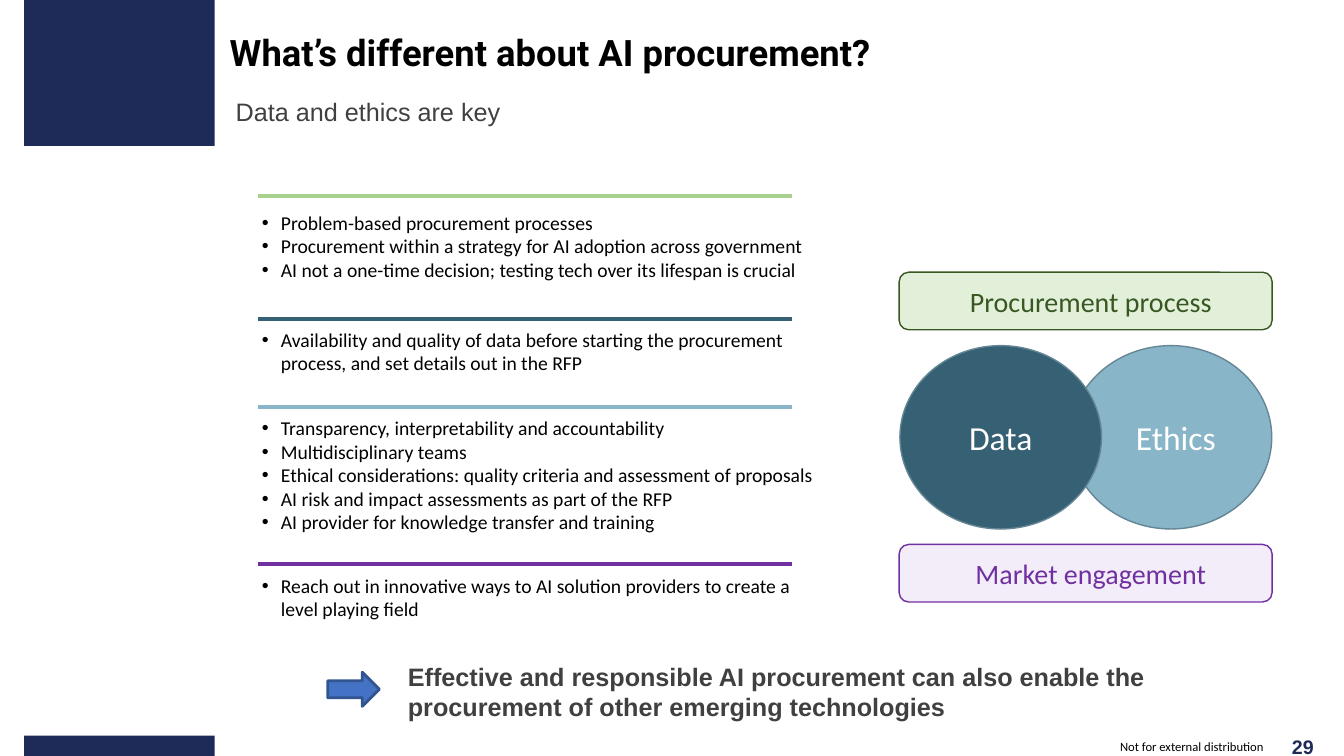
from lxml import etree
from pptx import Presentation
from pptx.dml.color import RGBColor
from pptx.enum.shapes import MSO_CONNECTOR, MSO_SHAPE
from pptx.enum.text import MSO_ANCHOR, PP_ALIGN
from pptx.oxml.ns import qn
from pptx.util import Cm, Pt

RECT, ROUNDED = MSO_SHAPE.RECTANGLE, MSO_SHAPE.ROUNDED_RECTANGLE
OVAL, ARROW = MSO_SHAPE.OVAL, MSO_SHAPE.RIGHT_ARROW
LEFT, CENTER = PP_ALIGN.LEFT, PP_ALIGN.CENTER
TOP, MIDDLE = MSO_ANCHOR.TOP, MSO_ANCHOR.MIDDLE

COLORS = {
    "navy": "1E2B58", "black": "000000", "white": "FFFFFF", "gray": "404040",
    "lime": "A9D18E", "green": "385723", "pale_green": "E2F0D9",
    "teal": "366073", "sky": "89B5C8", "outline": "658694",
    "purple": "7030A0", "pale_purple": "F3EDF9",
    "blue": "4472C4", "dark_blue": "325491",
}

TITLE = "What’s different about AI procurement?"
SUBTITLE = "Data and ethics are key"
CONCLUSION = ("Effective and responsible AI procurement can also enable the "
              "procurement of other emerging technologies")
FOOTER = "Not for external distribution"
PAGE = "29"

# rule colour, rule y, text y, text width, text height, bullets
SECTIONS = [
    ("lime", 4.93, 5.18, 16.18, 2.06, [
        "Problem-based procurement processes",
        "Procurement within a strategy for AI adoption across government",
        "AI not a one-time decision; testing tech over its lifespan is crucial"]),
    ("teal", 8.03, 8.13, 15.2, 1.45, [
        "Availability and quality of data before starting the procurement "
        "process, and set details out in the RFP"]),
    ("sky", 10.26, 10.36, 15.2, 3.25, [
        "Transparency, interpretability and accountability",
        "Multidisciplinary teams",
        "Ethical considerations: quality criteria and assessment of proposals",
        "AI risk and impact assessments as part of the RFP",
        "AI provider for knowledge transfer and training"]),
    ("purple", 14.22, 14.33, 14.22, 1.45, [
        "Reach out in innovative ways to AI solution providers to create a "
        "level playing field"]),
]
RULE_LEFT, RULE_RIGHT, BULLETS_LEFT = 6.5, 19.96, 6.35

# text, left, fill
CIRCLES = [("Ethics", 26.97, "sky"), ("Data", 22.68, "teal")]
# text, top, fill, colour of line and text
BANNERS = [("Procurement process", 6.86, "pale_green", "green"),
           ("Market engagement", 13.72, "pale_purple", "purple")]
INSETS = (0.25, 0.13, 0.25, 0.13)
BANNER_INSETS = (0.51, 0.13, 0.25, 0.13)


def color(name):
    return RGBColor.from_string(COLORS[name])


def write(s, lines, size, ink, font="Calibri", bold=False, align=LEFT,
          anchor=TOP, insets=INSETS, bulleted=False):
    tf = s.text_frame
    tf.word_wrap = True
    tf.vertical_anchor = anchor
    tf.margin_left, tf.margin_top, tf.margin_right, tf.margin_bottom = map(Cm, insets)
    for i, line in enumerate(lines):
        p = tf.add_paragraph() if i else tf.paragraphs[0]
        p.alignment = align
        if bulleted:
            pPr = p._p.get_or_add_pPr()
            pPr.set("marL", str(Cm(0.48)))
            pPr.set("indent", str(-Cm(0.48)))
            etree.SubElement(pPr, qn("a:buFont")).set("typeface", "Arial")
            etree.SubElement(pPr, qn("a:buChar")).set("char", "•")
        r = p.add_run()
        r.text = line
        r.font.name, r.font.size, r.font.bold = font, Pt(size), bold
        r.font.color.rgb = color(ink)


def add_text(slide, box, lines, size, ink, **style):
    write(slide.shapes.add_textbox(*map(Cm, box)), lines, size, ink, **style)


def add_shape(slide, kind, box, fill, line=None, width=1):
    s = slide.shapes.add_shape(kind, *map(Cm, box))
    s.shadow.inherit = False
    s.fill.solid()
    s.fill.fore_color.rgb = color(fill)
    if line:
        s.line.color.rgb = color(line)
        s.line.width = Pt(width)
    else:
        s.line.fill.background()
    return s


def add_rule(slide, y, ink):
    s = slide.shapes.add_connector(MSO_CONNECTOR.STRAIGHT, Cm(RULE_LEFT), Cm(y),
                                   Cm(RULE_RIGHT), Cm(y))
    s.line.color.rgb = color(ink)
    s.line.width = Pt(3)
    etree.SubElement(s._element.spPr, qn("a:effectLst"))


def main():
    prs = Presentation()
    prs.slide_width, prs.slide_height = Cm(33.87), Cm(19.05)
    slide = prs.slides.add_slide(prs.slide_layouts[6])

    for top, height in ((0, 3.68), (18.54, 0.51)):
        add_shape(slide, RECT, (0.61, top, 4.8, height), "navy")

    add_text(slide, (5.79, 0.76, 22.38, 2.34), [TITLE], 26, "black",
             font="Roboto", bold=True, insets=(0, 0, 0.25, 0))
    add_text(slide, (5.69, 2.31, 25.63, 1.19), [SUBTITLE], 18, "gray", font="Arial")

    for ink, rule_y, top, width, height, bullets in SECTIONS:
        add_rule(slide, rule_y, ink)
        add_text(slide, (BULLETS_LEFT, top, width, height), bullets, 14, "black",
                 bulleted=True)

    for text, left, fill in CIRCLES:
        s = add_shape(slide, OVAL, (left, 8.71, 5.08, 4.62), fill, "outline")
        insets = (0.25, 0.13, 0, 0.13) if text == "Ethics" else INSETS
        write(s, [text], 24, "white", align=CENTER, anchor=MIDDLE, insets=insets)
    for text, top, fill, ink in BANNERS:
        s = add_shape(slide, ROUNDED, (22.66, top, 9.4, 1.45), fill, ink)
        write(s, [text], 20, ink, align=CENTER, anchor=MIDDLE, insets=BANNER_INSETS)

    add_shape(slide, ARROW, (8.26, 16.94, 1.3, 0.86), "blue", "dark_blue", 2)
    add_text(slide, (10.03, 16.54, 20.5, 1.8), [CONCLUSION], 18, "gray",
             font="Arial", bold=True)
    add_text(slide, (27.89, 18.64, 4.29, 0.36), [FOOTER], 9, "black",
             align=CENTER, anchor=MIDDLE)
    add_text(slide, (32.44, 18.44, 0.79, 0.76), [PAGE], 14, "navy", font="Arial",
             bold=True, align=CENTER, anchor=MIDDLE, insets=(0, 0, 0, 0))

    prs.save("out.pptx")


if __name__ == "__main__":
    main()
